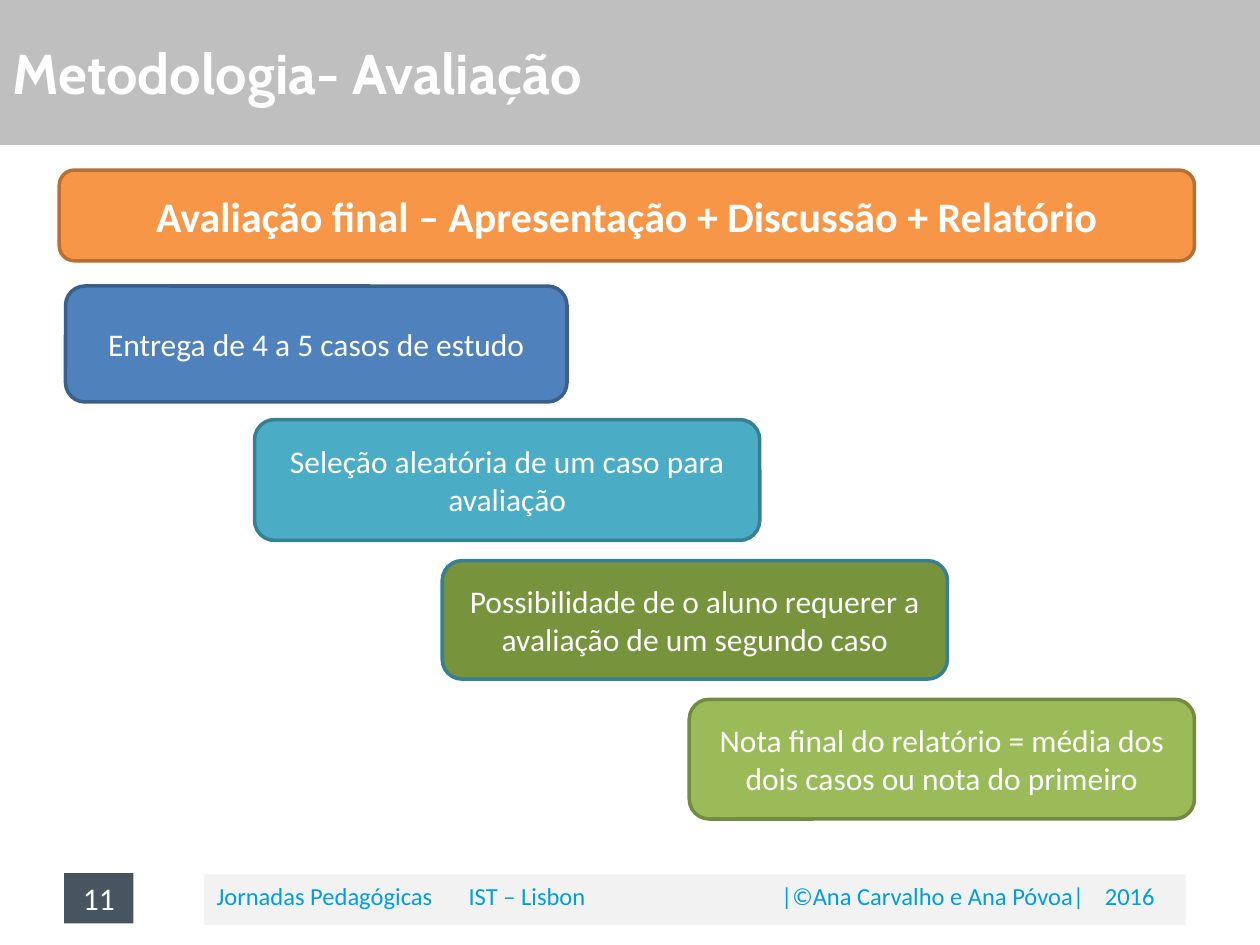
from lxml import etree
from pptx import Presentation
from pptx.dml.color import RGBColor
from pptx.enum.shapes import MSO_SHAPE
from pptx.enum.text import MSO_ANCHOR, PP_ALIGN
from pptx.oxml.ns import qn
from pptx.util import Inches, Pt

RECTANGLE = MSO_SHAPE.RECTANGLE
ROUNDED = MSO_SHAPE.ROUNDED_RECTANGLE
LEFT, CENTER = PP_ALIGN.LEFT, PP_ALIGN.CENTER
TOP, MIDDLE = MSO_ANCHOR.TOP, MSO_ANCHOR.MIDDLE

WHITE = RGBColor(0xFF, 0xFF, 0xFF)
HEADER_GRAY = RGBColor(0xBF, 0xBF, 0xBF)
FOOTER_GRAY = RGBColor(0xF2, 0xF2, 0xF2)
FOOTER_BLUE = RGBColor(0x00, 0x9D, 0xE0)
SLATE = RGBColor(0x46, 0x55, 0x5F)
ORANGE = RGBColor(0xF7, 0x96, 0x46)
DARK_ORANGE = RGBColor(0xB7, 0x6F, 0x34)
BLUE = RGBColor(0x4F, 0x81, 0xBD)
DARK_BLUE = RGBColor(0x3A, 0x5F, 0x8C)
TEAL = RGBColor(0x4B, 0xAC, 0xC6)
DARK_TEAL = RGBColor(0x37, 0x7F, 0x92)
OLIVE = RGBColor(0x77, 0x93, 0x3C)
GREEN = RGBColor(0x9B, 0xBB, 0x59)
DARK_GREEN = RGBColor(0x73, 0x8A, 0x42)

STEPS = [
    ("Entrega de 4 a 5 casos de estudo", (0.52, 2.27, 3.98, 0.92), BLUE, DARK_BLUE),
    ("Seleção aleatória de um caso para avaliação",
     (2.02, 3.33, 4.01, 0.96), TEAL, DARK_TEAL),
    ("Possibilidade de o aluno requerer a avaliação de um segundo caso",
     (3.51, 4.45, 4.01, 0.94), OLIVE, DARK_TEAL),
    ("Nota final do relatório = média dos dois casos ou nota do primeiro",
     (5.47, 5.55, 4.01, 0.95), GREEN, DARK_GREEN),
]
FOOTER_PARTS = ["Jornadas Pedagógicas", "IST – Lisbon",
                "|©Ana Carvalho e Ana Póvoa|", "2016"]
FOOTER_TABS = [2, 4.48, 7.05]


def add_box(slide, kind, box, fill, line=None):
    """Add a filled shape, outlined only when a line colour is given."""
    shape = slide.shapes.add_shape(kind, *map(Inches, box))
    shape.shadow.inherit = False
    shape.fill.solid()
    shape.fill.fore_color.rgb = fill
    if line is None:
        shape.line.fill.background()
    else:
        shape.line.color.rgb = line
        shape.line.width = Pt(2)
    return shape


def add_tab_stops(paragraph, positions):
    """Add left tab stops at the given distances in inches."""
    tab_list = etree.SubElement(paragraph._p.get_or_add_pPr(), qn("a:tabLst"))
    for position in positions:
        etree.SubElement(tab_list, qn("a:tab"), pos=str(Inches(position)), algn="l")


def write_text(shape, text, size=18, font="Calibri", color=WHITE, bold=False,
               align=CENTER, anchor=MIDDLE, tabs=()):
    """Write one formatted paragraph into a shape."""
    frame = shape.text_frame
    frame.word_wrap = True
    frame.vertical_anchor = anchor
    paragraph = frame.paragraphs[0]
    paragraph.alignment = align
    if tabs:
        add_tab_stops(paragraph, tabs)
    run = paragraph.add_run()
    run.text = text
    run.font.name = font
    run.font.size = Pt(size)
    run.font.bold = bold
    run.font.color.rgb = color


def add_footer(slide):
    """Add the page number and the tabbed footer line."""
    number = add_box(slide, RECTANGLE, (0.51, 6.93, 0.55, 0.4), SLATE)
    write_text(number, "11", anchor=TOP)
    footer = add_box(slide, RECTANGLE, (1.62, 6.94, 7.79, 0.4), FOOTER_GRAY)
    write_text(footer, "\t".join(FOOTER_PARTS), size=14, color=FOOTER_BLUE,
               align=LEFT, anchor=TOP, tabs=FOOTER_TABS)


def add_header(slide):
    """Add the title and the band that continues it to the right."""
    add_box(slide, RECTANGLE, (6.97, 0, 3.03, 1.15), HEADER_GRAY)
    title = add_box(slide, RECTANGLE, (0, 0, 6.97, 1.15), HEADER_GRAY)
    write_text(title, "Metodologia- Avaliação", size=32, font="Cabin",
               bold=True, align=LEFT)


def main():
    """Build the slide and save it."""
    presentation = Presentation()
    presentation.slide_width = Inches(10)
    presentation.slide_height = Inches(7.5)
    slide = presentation.slides.add_slide(presentation.slide_layouts[6])
    add_footer(slide)
    add_header(slide)
    for text, box, fill, line in STEPS:
        write_text(add_box(slide, ROUNDED, box, fill, line), text)
    banner = add_box(slide, ROUNDED, (0.47, 1.35, 9.01, 0.72), ORANGE, DARK_ORANGE)
    write_text(banner, "Avaliação final – Apresentação + Discussão + Relatório",
               size=24, bold=True)
    presentation.save("out.pptx")


if __name__ == "__main__":
    main()
